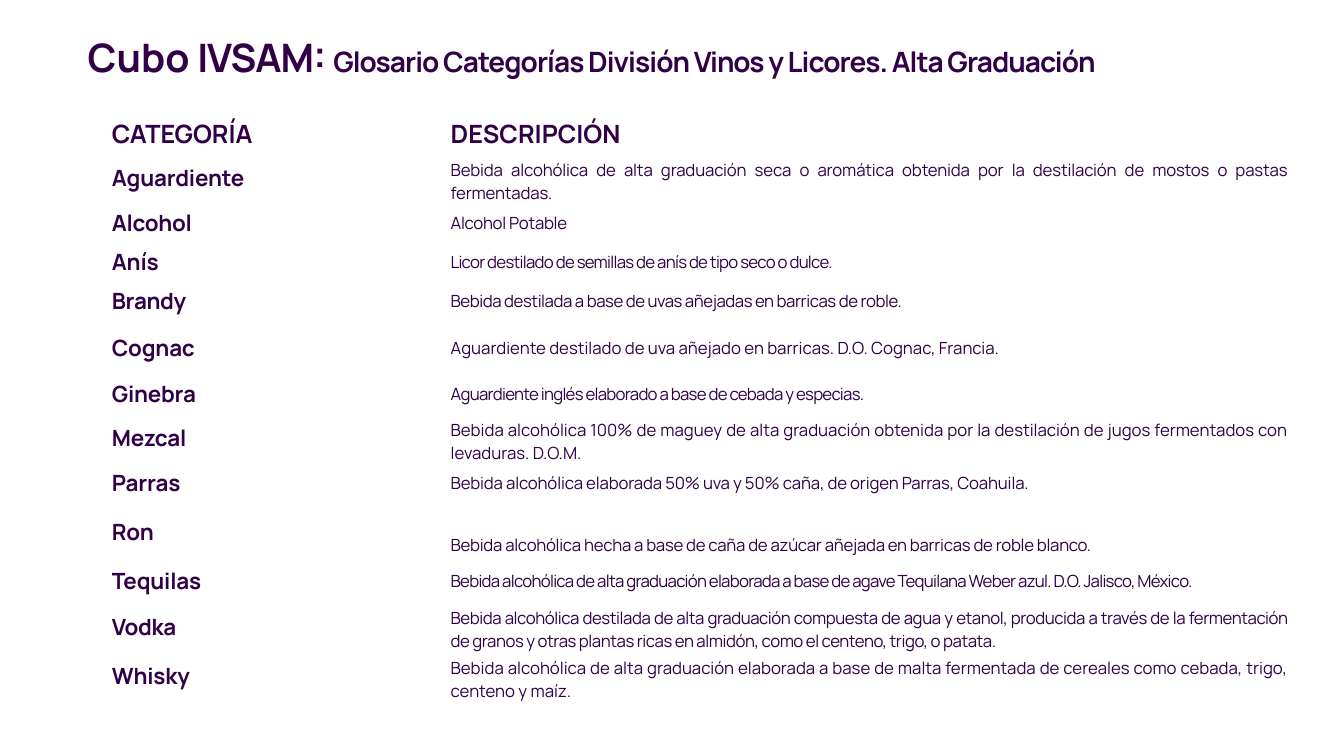
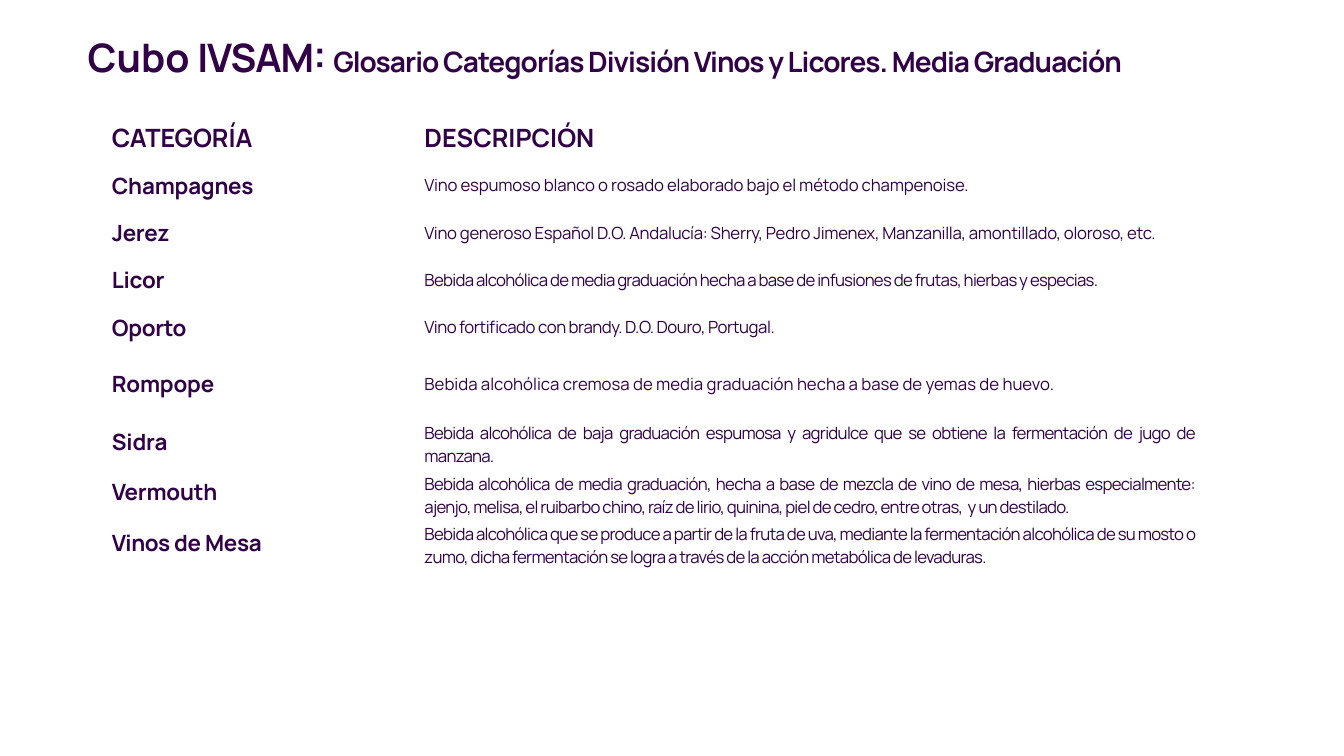
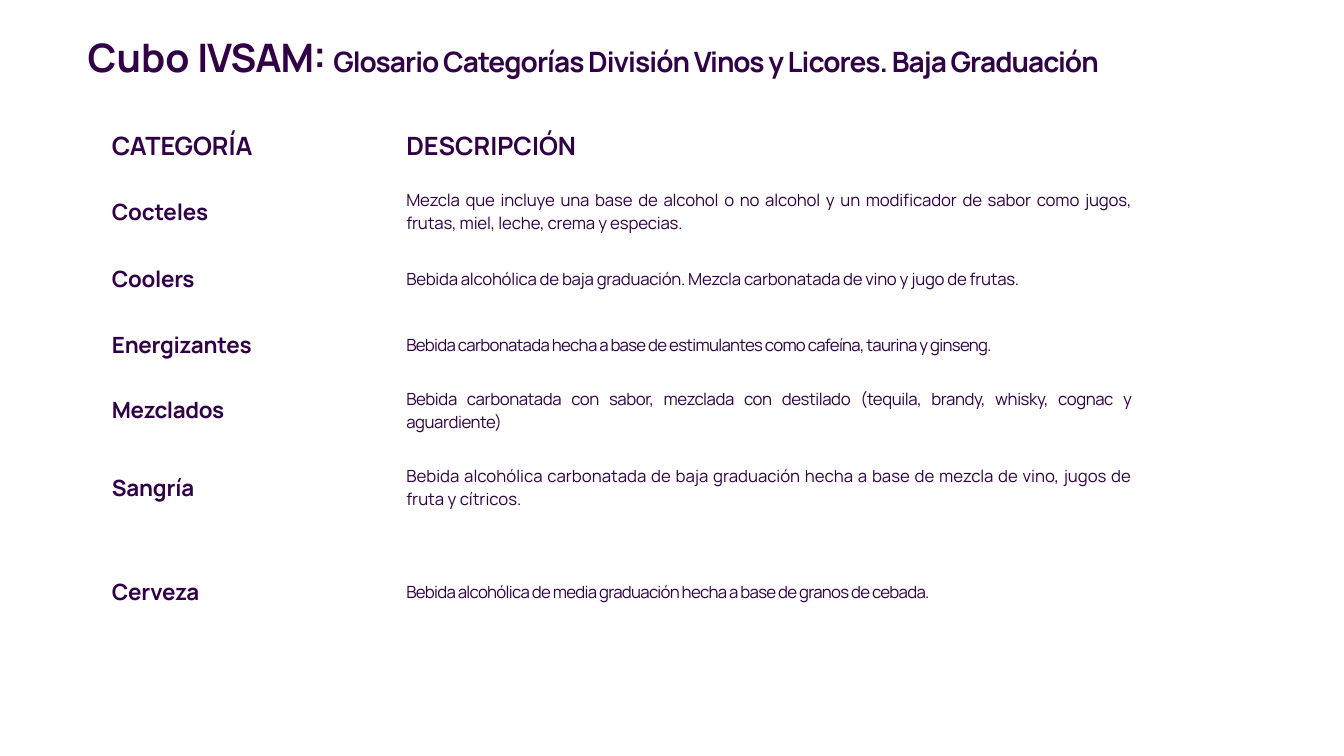
from pptx import Presentation
from pptx.dml.color import RGBColor
from pptx.enum.text import MSO_ANCHOR as Anchor, MSO_AUTO_SIZE as AutoSize, PP_ALIGN as Align
from pptx.util import Inches, Pt

PURPLE = RGBColor(0x31, 0x00, 0x46)
FONT = "Manrope"
TITLE_ONLY = 5
BOTTOM_GAP = 0.03


def add_run(paragraph, text, size, bold=True, spacing=0):
    run = paragraph.add_run()
    run.text = text
    run.font.name = FONT
    run.font.size = Pt(size)
    run.font.bold = bold
    run.font.color.rgb = PURPLE
    properties = run.font._element
    properties.set("spc", str(round(spacing * 100)))
    return properties


def format_cell(cell, top=0, align=Align.LEFT):
    cell.fill.background()
    cell.vertical_anchor = Anchor.MIDDLE
    cell.margin_left = cell.margin_right = Inches(0.1)
    cell.margin_top = Inches(top)
    cell.margin_bottom = Inches(0 if top else BOTTOM_GAP)
    paragraph = cell.text_frame.paragraphs[0]
    paragraph.alignment = align
    return paragraph


# Each entry: category, its spacing, description, its spacing, row height, top margin
HIGH = [
    ("Aguardiente", -0.1, "Bebida alcohólica de alta graduación seca o aromática obtenida por la "
     "destilación de mostos o pastas fermentadas.", -0.1, 0.49, 0.03),
    ("Alcohol", -0.2, "Alcohol Potable", -0.2, 0.39, 0),
    ("Anís", -0.1, "Licor destilado de semillas de anís de tipo seco o dulce.", -0.5, 0.39, 0),
    ("Brandy", -0.2, "Bebida destilada a base de uvas añejadas en barricas de roble.", -0.3, 0.39, 0),
    ("Cognac", -0.1, "Aguardiente destilado de uva añejado en barricas. D.O. Cognac, Francia.",
     0, 0.53, 0),
    ("Ginebra", -0.1, "Aguardiente inglés elaborado a base de cebada y especias.", -0.5, 0.39, 0),
    ("Mezcal", -0.1, "Bebida alcohólica 100% de maguey de alta graduación obtenida por la "
     "destilación de jugos fermentados con levaduras. D.O.M.", 0, 0.49, 0.03),
    ("Parras", -0.1, "Bebida alcohólica elaborada 50% uva y 50% caña, de origen Parras, Coahuila.",
     -0.1, 0.39, 0),
    ("Ron", -0.2, "Bebida alcohólica hecha a base de caña de azúcar añejada en barricas de roble "
     "blanco.", -0.2, 0.58, 0.23),
    ("Tequilas", -0.1, "Bebida alcohólica de alta graduación elaborada a base de agave Tequilana "
     "Weber azul. D.O. Jalisco, México.", -0.5, 0.41, 0),
    ("Vodka", -0.2, "Bebida alcohólica destilada de alta graduación compuesta de agua y etanol, "
     "producida a través de la fermentación de granos y otras plantas ricas en almidón, como el "
     "centeno, trigo, o patata.", -0.3, 0.49, 0.03),
    ("Whisky", -0.1, "Bebida alcohólica de alta graduación elaborada a base de malta fermentada "
     "de cereales como cebada, trigo, centeno y maíz.", 0, 0.49, 0.03),
]
MEDIUM = [
    ("Champagnes", -0.1, "Vino espumoso blanco o rosado elaborado bajo el método champenoise.",
     -0.1, 0.47, 0),
    ("Jerez", -0.2, "Vino generoso Español D.O. Andalucía: Sherry, Pedro Jimenex, Manzanilla, "
     "amontillado, oloroso, etc.", -0.2, 0.47, 0),
    ("Licor", -0.1, "Bebida alcohólica de media graduación hecha a base de infusiones de frutas, "
     "hierbas y especias.", -0.5, 0.47, 0),
    ("Oporto", -0.2, "Vino fortificado con brandy. D.O. Douro, Portugal.", -0.3, 0.47, 0),
    ("Rompope", -0.1, "Bebida alcohólica cremosa de media graduación hecha a base de yemas de "
     "huevo.", 0, 0.65, 0),
    ("Sidra", -0.1, "Bebida alcohólica de baja graduación espumosa y agridulce que se obtiene la "
     "fermentación de jugo de manzana.", -0.5, 0.5, 0.03),
    ("Vermouth", -0.1, "Bebida alcohólica de media graduación, hecha a base de mezcla de vino de "
     "mesa, hierbas especialmente: ajenjo, melisa, el ruibarbo chino, raíz de lirio, quinina, "
     "piel de cedro, entre otras,  y un destilado.", -0.5, 0.5, 0.03),
    ("Vinos de Mesa", -0.2, "Bebida alcohólica que se produce a partir de la fruta de uva, "
     "mediante la fermentación alcohólica de su mosto o zumo, dicha fermentación se logra a "
     "través de la acción metabólica de levaduras.", -0.5, 0.5, 0.03),
]
LOW = [
    ("Cocteles", -0.1, "Mezcla que incluye una base de alcohol o no alcohol y un modificador de "
     "sabor como jugos, frutas, miel, leche, crema y especias.", -0.1, 0.67, 0),
    ("Coolers", -0.2, "Bebida alcohólica de baja graduación. Mezcla carbonatada de vino y jugo "
     "de frutas.", -0.2, 0.67, 0),
    ("Energizantes", -0.1, "Bebida carbonatada hecha a base de estimulantes como cafeína, "
     "taurina y ginseng.", -0.5, 0.63, 0),
    ("Mezclados", -0.2, "Bebida carbonatada con sabor, mezclada con destilado (tequila, brandy, "
     "whisky, cognac y aguardiente)", -0.3, 0.67, 0),
    ("Sangría", -0.1, "Bebida alcohólica carbonatada de baja graduación hecha a base de mezcla "
     "de vino, jugos de fruta y cítricos.", 0, 0.87, 0),
    ("Cerveza", -0.1, "Bebida alcohólica de media graduación hecha a base de granos de cebada.",
     -0.5, 1.2, 0),
]

# Each slide: grade, title width, column widths, header height, entries
GLOSSARIES = [
    ("Alta", 10.94, (3.36, 8.51), 0.39, HIGH),
    ("Media", 11.09, (3.1, 7.85), 0.47, MEDIUM),
    ("Baja", 11.09, (2.92, 7.4), 0.63, LOW),
]

presentation = Presentation()
presentation.slide_width = Inches(13.33)
presentation.slide_height = Inches(7.5)

for grade, title_width, column_widths, header_height, entries in GLOSSARIES:
    slide = presentation.slides.add_slide(presentation.slide_layouts[TITLE_ONLY])

    # Title
    title = slide.shapes.title
    title.left, title.top = Inches(0.87), Inches(0.33)
    title.width, title.height = Inches(title_width), Inches(0.49)
    frame = title.text_frame
    frame.word_wrap = True
    frame.auto_size = AutoSize.SHAPE_TO_FIT_TEXT
    frame.vertical_anchor = Anchor.TOP
    frame.margin_left = frame.margin_right = frame.margin_top = frame.margin_bottom = 0
    paragraph = frame.paragraphs[0]
    paragraph.alignment = Align.LEFT
    add_run(paragraph, "Cubo ", 28)
    add_run(paragraph, "IVSAM: ", 28, spacing=-0.7)
    add_run(paragraph, f"Glosario Categorías División Vinos y Licores. {grade} Graduación", 20,
            spacing=-0.7)

    # Glossary table
    heights = [header_height] + [entry[4] for entry in entries]
    table = slide.shapes.add_table(len(heights), 2, Inches(1.01), Inches(1.15),
                                   Inches(sum(column_widths)), Inches(sum(heights))).table
    table.first_row = table.horz_banding = False
    for column, width in zip(table.columns, column_widths):
        column.width = Inches(width)
    for row, height in zip(table.rows, heights):
        row.height = Inches(height)

    # Header row
    add_run(format_cell(table.cell(0, 0)), "CATEGORÍA", 18)
    add_run(format_cell(table.cell(0, 1)), "Descripción", 18).set("cap", "all")

    # Category rows
    for index, entry in enumerate(entries, start=1):
        category, category_spacing, description, description_spacing, _, top = entry
        add_run(format_cell(table.cell(index, 0)), category, 16, spacing=category_spacing)
        add_run(format_cell(table.cell(index, 1), top, Align.JUSTIFY), description, 12,
                bold=False, spacing=description_spacing)

presentation.save("out.pptx")
